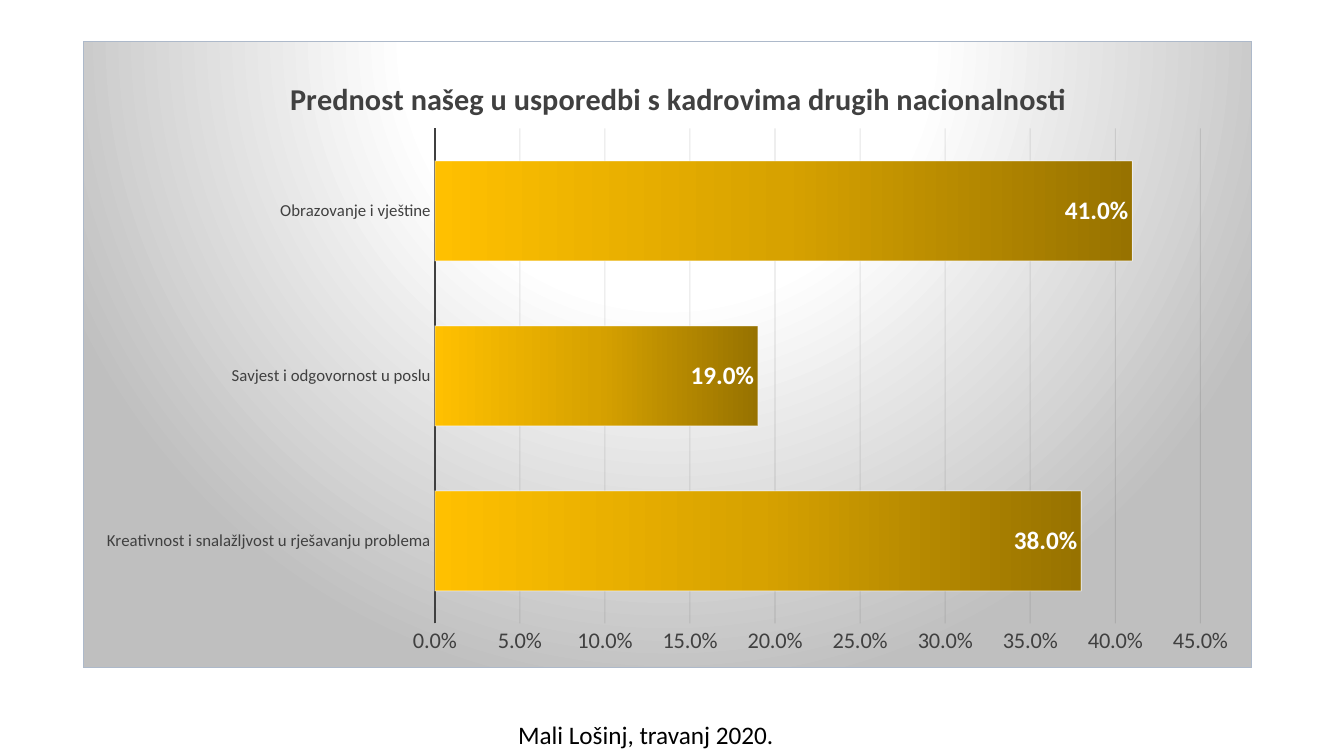
from dataclasses import dataclass

from lxml import etree
from pptx import Presentation
from pptx.chart.data import CategoryChartData
from pptx.dml.color import RGBColor
from pptx.enum.chart import XL_CHART_TYPE, XL_LABEL_POSITION, XL_TICK_MARK
from pptx.enum.text import MSO_AUTO_SIZE
from pptx.oxml import parse_xml
from pptx.util import Emu, Pt

BARS = XL_CHART_TYPE.BAR_CLUSTERED
INSIDE = XL_LABEL_POSITION.INSIDE_END
NO_TICK = XL_TICK_MARK.NONE
GROW = MSO_AUTO_SIZE.SHAPE_TO_FIT_TEXT

PX = 9144
FONT = "Calibri"
PERCENT = "0.0%"
BLACK = RGBColor(0x00, 0x00, 0x00)
WHITE = RGBColor(0xFF, 0xFF, 0xFF)
DARK = RGBColor(0x40, 0x40, 0x40)
GRID = RGBColor(0x0D, 0x0D, 0x0D)
SILVER = RGBColor(0xBF, 0xBF, 0xBF)
EDGE = RGBColor(0xAD, 0xB9, 0xCA)
BROWN = RGBColor(0x97, 0x72, 0x00)
AMBER = RGBColor(0xD7, 0xA2, 0x00)
GOLD = RGBColor(0xFF, 0xC0, 0x00)

A = "http://schemas.openxmlformats.org/drawingml/2006/main"
C = "http://schemas.openxmlformats.org/drawingml/2006/chart"


@dataclass(frozen=True)
class Box:
    left: int
    top: int
    width: int
    height: int

    def emu(self) -> list[Emu]:
        return [Emu(n * PX) for n in (self.left, self.top, self.width, self.height)]


@dataclass(frozen=True)
class Stop:
    place: int
    color: RGBColor


@dataclass(frozen=True)
class Answer:
    label: str
    share: float


FRAME = Box(82, 41, 1160, 622)
PLOT = Box(349, 86, 760, 492)
TITLE = Box(200, 30, 0, 0)
FOOTER = Box(504, 709, 276, 40)

ANSWERS = [
    Answer("Kreativnost i snalažljvost u rješavanju problema", 0.38),
    Answer("Savjest i odgovornost u poslu", 0.19),
    Answer("Obrazovanje i vještine", 0.41),
]
BAR_STOPS = [Stop(0, BROWN), Stop(50, AMBER), Stop(100, GOLD)]
BACK_STOPS = [Stop(0, WHITE), Stop(39, WHITE), Stop(100, SILVER)]
ACROSS = '<a:lin ang="10800000" scaled="0"/>'
ROUND = ('<a:path path="circle"><a:fillToRect l="50000" t="-80000" '
         'r="50000" b="180000"/></a:path>')


def blend(stops: list[Stop], shade: str):
    marks = "".join(
        f'<a:gs pos="{s.place * 1000}"><a:srgbClr val="{s.color}"/></a:gs>' for s in stops)
    return parse_xml(f'<a:gradFill xmlns:a="{A}" rotWithShape="1">'
                     f'<a:gsLst>{marks}</a:gsLst>{shade}</a:gradFill>')


def style(font, size: float, color: RGBColor, bold: bool = False) -> None:
    font.name = FONT
    font.size = Pt(size)
    font.bold = bold
    font.color.rgb = color


def stroke(line, color: RGBColor, width: float, alpha: int = 100) -> None:
    line.color.rgb = color
    line.width = Pt(width)
    if alpha < 100:
        tone = line.fill._xPr.find(f".//{{{A}}}srgbClr")
        etree.SubElement(tone, f"{{{A}}}alpha").set("val", str(alpha * 1000))


def settle(node, index: int, box: Box) -> None:
    for old in node.findall(f"{{{C}}}layout"):
        node.remove(old)
    parts = {"x": box.left / FRAME.width, "y": box.top / FRAME.height}
    target = ""
    if box.width:
        target = '<c:layoutTarget val="inner"/>'
        parts |= {"w": box.width / FRAME.width, "h": box.height / FRAME.height}
    modes = '<c:xMode val="edge"/><c:yMode val="edge"/>'
    sizes = "".join(f'<c:{key} val="{value:.4f}"/>' for key, value in parts.items())
    node.insert(index, parse_xml(
        f'<c:layout xmlns:c="{C}"><c:manualLayout>{target}{modes}{sizes}'
        '</c:manualLayout></c:layout>'))


def draw_chart(slide) -> None:
    data = CategoryChartData(number_format=PERCENT)
    data.categories = [a.label for a in ANSWERS]
    data.add_series("Series 1", [a.share for a in ANSWERS])
    chart = slide.shapes.add_chart(BARS, *FRAME.emu(), data).chart
    style(chart.font, 10, BLACK)
    chart.has_legend = False

    run = chart.chart_title.text_frame.paragraphs[0].add_run()
    run.text = "Prednost našeg u usporedbi s kadrovima drugih nacionalnosti"
    style(run.font, 21.6, DARK, True)
    settle(chart.chart_title._element, 1, TITLE)

    root = chart._chartSpace
    body = root.find(f"{{{C}}}chart")
    settle(body.find(f"{{{C}}}plotArea"), 0, PLOT)
    back = parse_xml(f'<c:spPr xmlns:c="{C}" xmlns:a="{A}"><a:ln w="{Pt(0.75)}">'
                     f'<a:solidFill><a:srgbClr val="{EDGE}"/></a:solidFill></a:ln></c:spPr>')
    back.insert(0, blend(BACK_STOPS, ROUND))
    body.addnext(back)

    names, scale = chart.category_axis, chart.value_axis
    for axis, size in ((names, 12), (scale, 16)):
        axis.major_tick_mark = axis.minor_tick_mark = NO_TICK
        style(axis.tick_labels.font, size, DARK)
    stroke(names.format.line, DARK, 1.5)
    scale.format.line.fill.background()
    scale.minimum_scale, scale.maximum_scale, scale.major_unit = 0, 0.45, 0.05
    scale.tick_labels.number_format = PERCENT
    scale.tick_labels.number_format_is_linked = False
    stroke(scale.major_gridlines.format.line, GRID, 0.75, 10)

    plot = chart.plots[0]
    plot.gap_width = 65
    plot.vary_by_categories = False
    bars = plot.series[0]
    stroke(bars.format.line, WHITE, 0.75, 50)
    bars._element.get_or_add_spPr().insert(0, blend(BAR_STOPS, ACROSS))
    labels = bars.data_labels
    labels.show_value = True
    labels.position = INSIDE
    labels.number_format = PERCENT
    labels.number_format_is_linked = False
    style(labels.font, 18, WHITE, True)


def draw_footer(slide) -> None:
    frame = slide.shapes.add_textbox(*FOOTER.emu()).text_frame
    frame.word_wrap = False
    frame.auto_size = GROW
    run = frame.paragraphs[0].add_run()
    run.text = "Mali Lošinj, travanj 2020."
    style(run.font, 18, BLACK)


def main() -> None:
    deck = Presentation()
    deck.slide_width, deck.slide_height = Emu(1333 * PX), Emu(750 * PX)
    slide = deck.slides.add_slide(deck.slide_layouts[6])
    draw_chart(slide)
    draw_footer(slide)
    deck.save("out.pptx")


if __name__ == "__main__":
    main()
